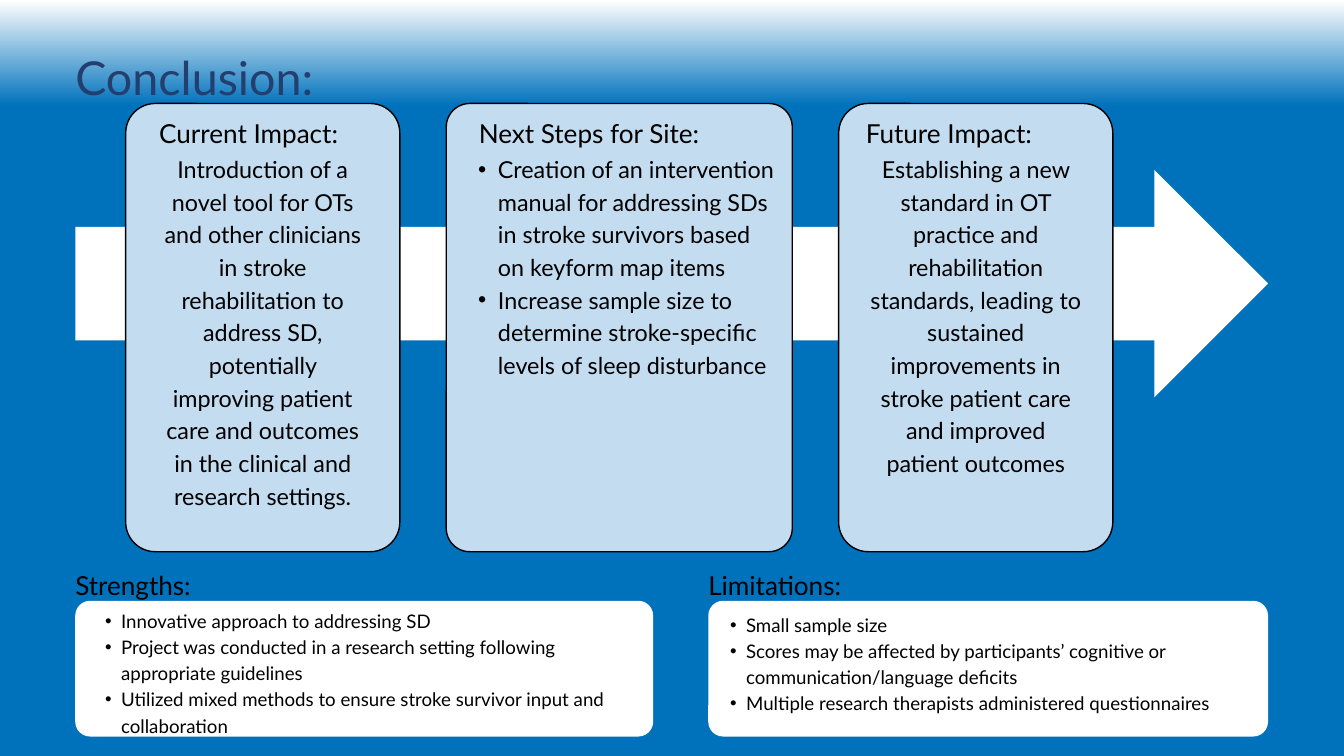
import pptx
import pptx.util
import pptx.dml.color
import pptx.enum.shapes
import pptx.enum.text
import pptx.oxml.ns
import lxml.etree

Inches = pptx.util.Inches
Pt = pptx.util.Pt
SHAPE = pptx.enum.shapes.MSO_SHAPE
ALIGN = pptx.enum.text.PP_ALIGN

FONT = "Lato"
COLORS = {"blue": "0072BC", "card": "C4DCEF", "title": "233F70",
          "text": "000000", "white": "FFFFFF"}

TITLE = "Conclusion:"

# Boxes are left, top, width, height in inches.
CARDS = [
    {"card": (1.87, 4.08), "head": "Current Impact:", "head_at": (1.91, 3.58),
     "body_at": (2.33, 3.16), "bullets": False,
     "body": ["Introduction of a novel tool for OTs and other clinicians in "
              "stroke rehabilitation to address SD, potentially improving "
              "patient care and outcomes in the clinical and research "
              "settings."]},
    {"card": (6.64, 5.15), "head": "Next Steps for Site:",
     "head_at": (6.85, 3.83), "body_at": (6.82, 4.79), "bullets": True,
     "body": ["Creation of an intervention manual for addressing SDs in "
              "stroke survivors based on keyform map items",
              "Increase sample size to determine stroke-specific levels of "
              "sleep disturbance"]},
    {"card": (12.48, 4.08), "head": "Future Impact:",
     "head_at": (12.33, 3.58), "body_at": (12.94, 3.16), "bullets": False,
     "body": ["Establishing a new standard in OT practice and "
              "rehabilitation standards, leading to sustained improvements "
              "in stroke patient care and improved patient outcomes"]},
]

PANELS = [
    {"head": "Strengths:", "left": 1.12, "width": 8.6,
     "list_at": (1.33, 9.02, 8.18, 1.92),
     "items": ["Innovative approach to addressing SD",
               "Project was conducted in a research setting following "
               "appropriate guidelines",
               "Utilized mixed methods to ensure stroke survivor input and "
               "collaboration"]},
    {"head": "Limitations:", "left": 10.54, "width": 8.33,
     "list_at": (10.63, 9.08, 8.18, 1.54),
     "items": ["Small sample size",
               "Scores may be affected by participants’ cognitive or "
               "communication/language deficits",
               "Multiple research therapists administered questionnaires"]},
]


def rgb(name):
    return pptx.dml.color.RGBColor.from_string(COLORS[name])


def add_shape(slide, kind, box, fill, line=None, radius=None):
    """Draw a flat shape; radius is the corner radius in inches."""
    shape = slide.shapes.add_shape(kind, *map(Inches, box))
    shape.shadow.inherit = False
    shape.fill.solid()
    shape.fill.fore_color.rgb = rgb(fill)
    if line:
        shape.line.color.rgb = rgb(line)
        shape.line.width = Pt(1.5)
    else:
        shape.line.fill.background()
    if radius:
        shape.adjustments[0] = radius / min(box[2:])


def add_bullet(para, size):
    props = para._p.get_or_add_pPr()
    props.set("marL", str(Pt(size * 1.7)))
    props.set("indent", str(-Pt(size * 0.85)))
    tag = pptx.oxml.ns.qn
    lxml.etree.SubElement(props, tag("a:buFont"), typeface="Arial")
    lxml.etree.SubElement(props, tag("a:buChar"), char="•")


def write(shape, box, lines, size, color="text", align=ALIGN.LEFT,
          bullets=False):
    """Place a text shape in front of all others and fill it."""
    shape._element.getparent().append(shape._element)
    shape.left, shape.top, shape.width, shape.height = map(Inches, box)
    frame = shape.text_frame
    frame.word_wrap = True
    frame.auto_size = pptx.enum.text.MSO_AUTO_SIZE.NONE
    frame.vertical_anchor = pptx.enum.text.MSO_ANCHOR.TOP
    frame.margin_left = frame.margin_right = 0
    frame.margin_top = frame.margin_bottom = 0
    frame.text = "\n".join(lines)
    for para in frame.paragraphs:
        if bullets:
            add_bullet(para, size)
        para.alignment = align
        para.line_spacing = Pt(size * 1.4)
        para.space_before = Pt(0)
        para.font.name = FONT
        para.font.size = Pt(size)
        para.font.bold = False
        para.font.color.rgb = rgb(color)


def add_text(slide, box, *args, **style):
    write(slide.shapes.add_textbox(0, 0, 0, 0), box, *args, **style)


def set_back(slide):
    fill = slide.background.fill
    fill.gradient()
    fill.gradient_angle = 270
    stops = zip(fill.gradient_stops, (0, 0.14), ("white", "blue"))
    for stop, place, color in stops:
        stop.position = place
        stop.color.rgb = rgb(color)


def add_card(slide, card):
    left, width = card["card"]
    add_shape(slide, SHAPE.ROUNDED_RECTANGLE, (left, 1.54, width, 6.67),
              "card", line="text", radius=0.44 if width < 5 else 0.35)
    left, width = card["head_at"]
    add_text(slide, (left, 1.67, width, 0.53), [card["head"]], 28,
             align=ALIGN.CENTER)
    left, width = card["body_at"]
    add_text(slide, (left, 2.24, width, 5.73), card["body"], 25,
             align=ALIGN.LEFT if card["bullets"] else ALIGN.CENTER,
             bullets=card["bullets"])


def add_panel(slide, panel, head, body):
    left = panel["left"]
    add_shape(slide, SHAPE.ROUNDED_RECTANGLE,
              (left, 8.94, panel["width"], 2.02), "white", radius=0.22)
    write(head, (left, 8.39, 3.58, 0.53), [panel["head"]], 28)
    write(body, panel["list_at"], panel["items"], 20, bullets=True)


def main():
    deck = pptx.Presentation()
    deck.slide_width, deck.slide_height = Inches(20), Inches(11.25)
    layout = deck.slide_layouts.get_by_name("Comparison")
    slide = deck.slides.add_slide(layout)
    set_back(slide)
    title, *holders = list(slide.placeholders)[:5]
    add_shape(slide, SHAPE.RIGHT_ARROW, (1.12, 2.53, 17.75, 3.38), "white")
    write(title, (1.12, 0.59, 8.59, 0.95), [TITLE], 50, color="title")
    for card in CARDS:
        add_card(slide, card)
    for panel, head, body in zip(PANELS, holders[::2], holders[1::2]):
        add_panel(slide, panel, head, body)
    deck.save("out.pptx")


if __name__ == "__main__":
    main()
